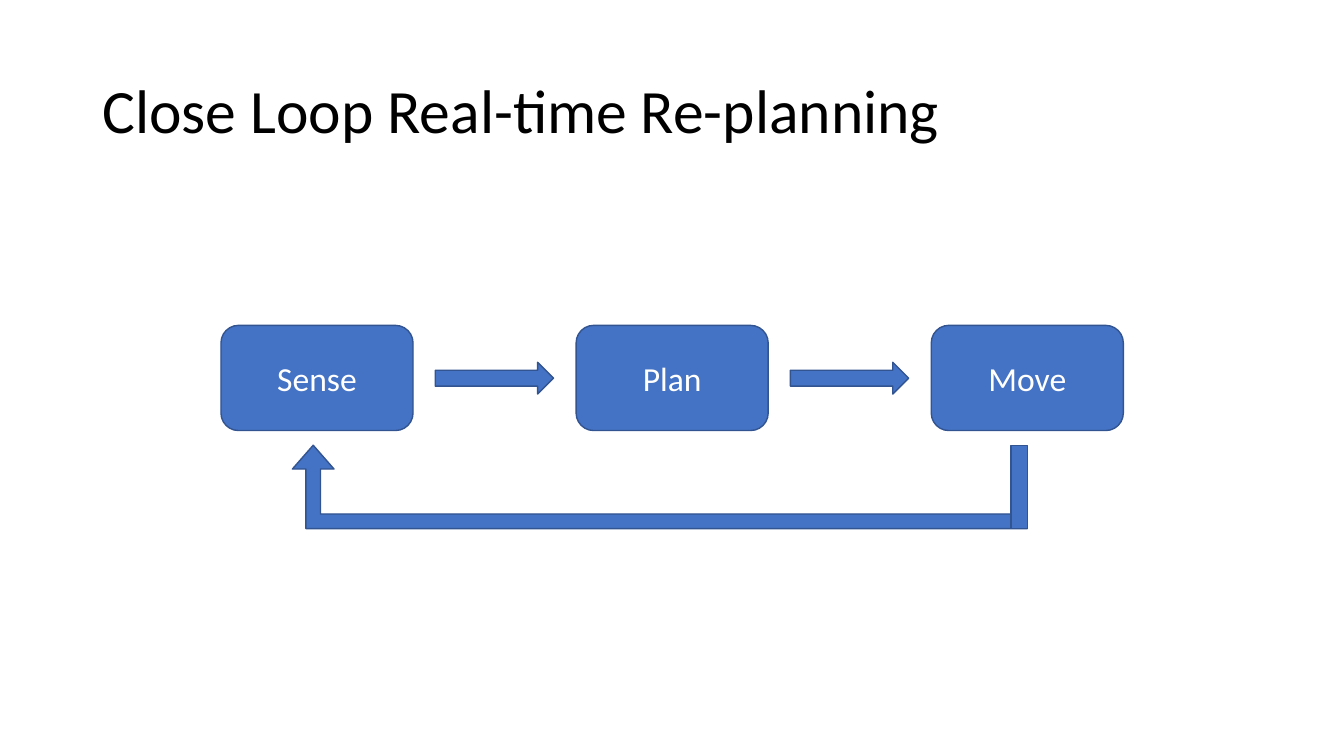
"""Build the closed-loop re-planning slide: sense, plan, move and back again."""
from dataclasses import dataclass

from pptx import Presentation
from pptx.dml.color import RGBColor
from pptx.enum.shapes import MSO_SHAPE
from pptx.enum.text import MSO_ANCHOR, MSO_AUTO_SIZE, PP_ALIGN
from pptx.shapes.autoshape import Shape
from pptx.slide import Slide
from pptx.text.text import TextFrame
from pptx.util import Cm, Pt

ROUNDED = MSO_SHAPE.ROUNDED_RECTANGLE
RIGHT_ARROW = MSO_SHAPE.RIGHT_ARROW
BENT_ARROW = MSO_SHAPE.BENT_UP_ARROW
RECTANGLE = MSO_SHAPE.RECTANGLE
MIDDLE = MSO_ANCHOR.MIDDLE
NO_AUTOFIT = MSO_AUTO_SIZE.NONE
LEFT, CENTER = PP_ALIGN.LEFT, PP_ALIGN.CENTER

BLUE = RGBColor(0x44, 0x72, 0xC4)
DARK_BLUE = RGBColor(0x32, 0x54, 0x91)
WHITE = RGBColor(0xFF, 0xFF, 0xFF)
BLACK = RGBColor(0x00, 0x00, 0x00)
FONT = "Calibri"

STEPS = ("Sense", "Plan", "Move")
STEP_LEFT, STEP_PITCH = 5.57, 8.95
ARROW_LEFT = 10.97
RETURN_TOP, RETURN_HEIGHT = 11.22, 2.1


@dataclass(frozen=True)
class Block:
    kind: MSO_SHAPE
    left: float
    top: float
    width: float
    height: float
    text: str = ""
    adjustments: tuple[float, ...] = ()
    mirrored: bool = False


def set_text(tf: TextFrame, text: str, size: int, color: RGBColor,
             align: PP_ALIGN) -> None:
    tf.text = text
    tf.word_wrap = True
    tf.auto_size = NO_AUTOFIT
    tf.vertical_anchor = MIDDLE
    p = tf.paragraphs[0]
    p.alignment = align
    p.font.name = FONT
    p.font.size = Pt(size)
    p.font.color.rgb = color


def add_title(s: Slide, text: str) -> None:
    title = s.shapes.title
    title.left, title.top = Cm(2.33), Cm(1.01)
    title.width, title.height = Cm(29.21), Cm(3.68)
    set_text(title.text_frame, text, 44, BLACK, LEFT)
    title.text_frame.paragraphs[0].line_spacing = 0.9


def add_block(s: Slide, block: Block) -> Shape:
    sp = s.shapes.add_shape(block.kind, Cm(block.left), Cm(block.top),
                            Cm(block.width), Cm(block.height))
    sp.shadow.inherit = False
    sp.fill.solid()
    sp.fill.fore_color.rgb = BLUE
    sp.line.color.rgb = DARK_BLUE
    sp.line.width = Pt(1)
    for i, value in enumerate(block.adjustments):
        sp.adjustments[i] = value
    if block.mirrored:
        sp._element.spPr.xfrm.set("flipH", "1")
    if block.text:
        set_text(sp.text_frame, block.text, 24, WHITE, CENTER)
    return sp


def main() -> None:
    prs = Presentation()
    prs.slide_width, prs.slide_height = Cm(33.87), Cm(19.05)
    s = prs.slides.add_slide(prs.slide_layouts[5])
    add_title(s, "Close Loop Real-time Re-planning")

    steps = [Block(ROUNDED, STEP_LEFT + i * STEP_PITCH, 8.2, 4.84, 2.65, text)
             for i, text in enumerate(STEPS)]
    arrows = [Block(RIGHT_ARROW, ARROW_LEFT + i * STEP_PITCH, 9.13, 2.98, 0.8)
              for i in range(len(STEPS) - 1)]
    return_path = [
        Block(BENT_ARROW, 7.37, RETURN_TOP, 18.52, RETURN_HEIGHT,
              adjustments=(0.175, 0.25, 0.286), mirrored=True),
        Block(RECTANGLE, 25.48, RETURN_TOP, 0.41, RETURN_HEIGHT),
    ]
    for block in steps + arrows + return_path:
        add_block(s, block)
    prs.save("out.pptx")


if __name__ == "__main__":
    main()
